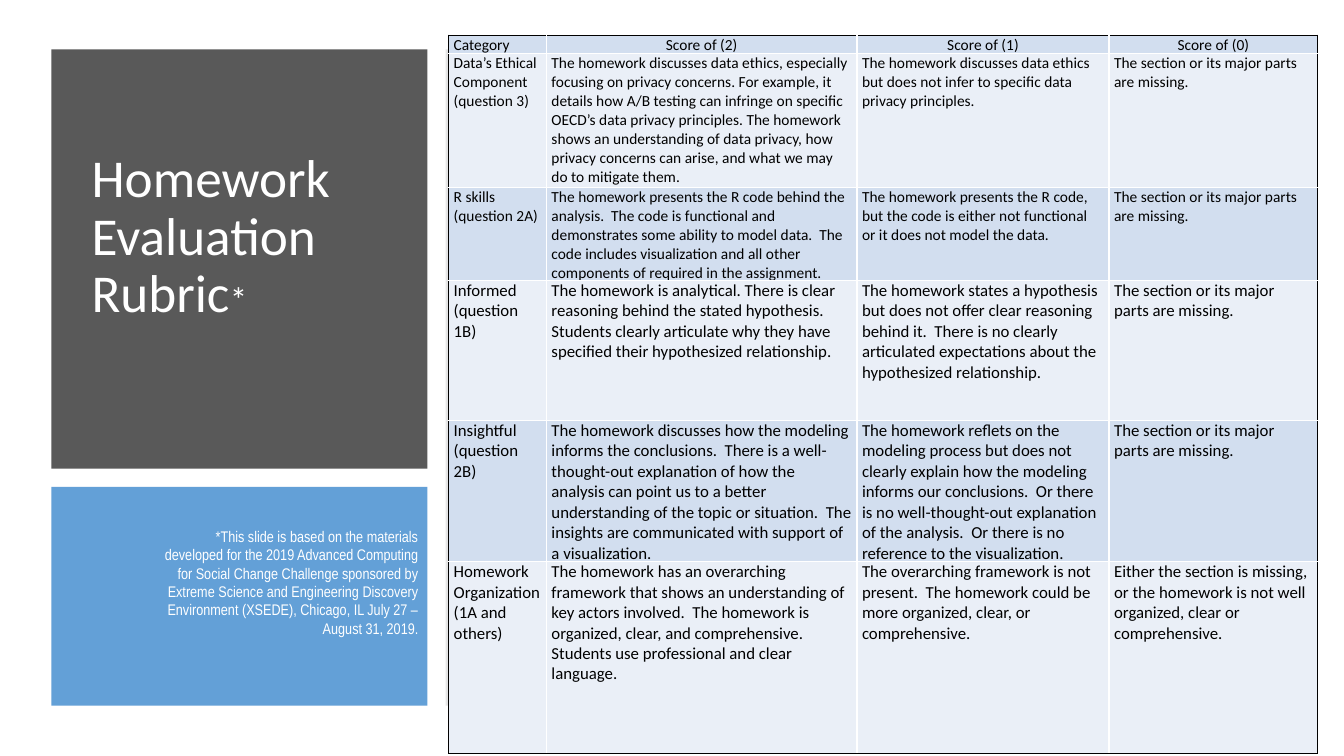
from pptx import Presentation
from pptx.dml.color import RGBColor
from pptx.enum.shapes import MSO_SHAPE as Shape
from pptx.enum.text import MSO_ANCHOR as Anchor, PP_ALIGN as Align
from pptx.oxml import parse_xml
from pptx.oxml.ns import nsdecls
from pptx.util import Inches, Pt


def paint(color_format, hex_color, opacity=100):
    color_format.rgb = RGBColor.from_string(hex_color)
    if opacity < 100:
        alpha = parse_xml(f'<a:alpha {nsdecls("a")} val="{opacity * 1000}"/>')
        color_format._xFill.find(".//{*}srgbClr").append(alpha)


def add_text(paragraph, text, size, font, color):
    run = paragraph.add_run()
    run.text = text
    run.font.size = Pt(size)
    run.font.name = font
    paint(run.font.color, color)


prs = Presentation()
prs.slide_width = Inches(13.33)
prs.slide_height = Inches(7.5)
slide = prs.slides.add_slide(prs.slide_layouts[6])

# Background panels: title, footnote, table
panels = [
    (0.51, 0.49, 3.73, 4.16, "595959", 100),
    (0.51, 4.83, 3.73, 2.17, "5B9BD5", 95),
    (4.42, 0.49, 8.41, 6.51, "808080", 20),
]
for left, top, width, height, color, opacity in panels:
    panel = slide.shapes.add_shape(
        Shape.RECTANGLE, Inches(left), Inches(top), Inches(width), Inches(height))
    panel.shadow.inherit = False
    panel.line.fill.background()
    panel.fill.solid()
    paint(panel.fill.fore_color, color, opacity)

# Title
title = slide.shapes.add_textbox(
    Inches(0.81), Inches(0.8), Inches(3.3), Inches(3.54)).text_frame
title.word_wrap = True
title.vertical_anchor = Anchor.MIDDLE
heading = title.paragraphs[0]
heading.line_spacing = 0.9
add_text(heading, "Homework Evaluation Rubric", 38, "Calibri", "FFFFFF")
add_text(heading, "*", 25, "Calibri", "FFFFFF")
heading.add_line_break()
heading.font.size = Pt(25)

# Footnote
footnote = slide.shapes.add_textbox(
    Inches(1.52), Inches(4.69), Inches(2.73), Inches(2.17)).text_frame
footnote.word_wrap = True
footnote.vertical_anchor = Anchor.MIDDLE
credit = footnote.paragraphs[0]
credit.alignment = Align.RIGHT
add_text(credit, "*This slide is based on the materials developed for the 2019 "
         "Advanced Computing for Social Change Challenge sponsored by Extreme "
         "Science and Engineering Discovery Environment (XSEDE), Chicago, IL "
         "July 27 – August 31, 2019.", 11, "Arial Narrow", "FFFFFF")

# Rubric content: a newline starts a new paragraph
missing = "The section or its major parts are missing."
rubric = [
    ["Category", "Score of (2)", "Score of (1)", "Score of (0)"],
    ["Data’s Ethical Component\n(question 3)",
     "The homework discusses data ethics, especially focusing on privacy concerns. "
     "For example, it details how A/B testing can infringe on specific OECD’s data "
     "privacy principles. The homework shows an understanding of data privacy, how "
     "privacy concerns can arise, and what we may do to mitigate them.",
     "The homework discusses data ethics but does not infer to specific data "
     "privacy principles.",
     missing],
    ["R skills (question 2A)",
     "The homework presents the R code behind the analysis.  The code is functional "
     "and demonstrates some ability to model data.  The code includes visualization "
     "and all other components of required in the assignment.",
     "The homework presents the R code, but the code is either not functional or it "
     "does not model the data.",
     missing],
    ["Informed (question 1B)",
     "The homework is analytical. There is clear reasoning behind the stated "
     "hypothesis.  Students clearly articulate why they have specified their "
     "hypothesized relationship.",
     "The homework states a hypothesis but does not offer clear reasoning behind "
     "it.  There is no clearly articulated expectations about the hypothesized "
     "relationship.",
     missing],
    ["Insightful\n(question 2B)",
     "The homework discusses how the modeling informs the conclusions.  There is a "
     "well-thought-out explanation of how the analysis can point us to a better "
     "understanding of the topic or situation.  The insights are communicated with "
     "support of a visualization.",
     "The homework reflets on the modeling process but does not clearly explain how "
     "the modeling informs our conclusions.  Or there is no well-thought-out "
     "explanation of the analysis.  Or there is no reference to the visualization.",
     missing],
    ["Homework Organization (1A and others)",
     "The homework has an overarching framework that shows an understanding of key "
     "actors involved.  The homework is organized, clear, and comprehensive. "
     "Students use professional and clear language.",
     "The overarching framework is not present.  The homework could be more "
     "organized, clear, or comprehensive.",
     "Either the section is missing, or the homework is not well organized, clear "
     "or comprehensive."],
]
column_widths = [0.97, 3.08, 2.5, 2.07]
row_heights = [0.18, 1.33, 0.63, 1.39, 1.07, 1.9]
last_row, last_column = len(row_heights) - 1, len(column_widths) - 1

# Rubric table
table = slide.shapes.add_table(
    len(row_heights), len(column_widths),
    Inches(4.45), Inches(0.35), Inches(8.61), Inches(7.13)).table
for column, width in zip(table.columns, column_widths):
    column.width = Inches(width)
for row, height in zip(table.rows, row_heights):
    row.height = Inches(height)

for r, scores in enumerate(rubric):
    for c, text in enumerate(scores):
        cell = table.cell(r, c)
        cell.margin_left = cell.margin_right = Inches(0.05)
        cell.margin_top = cell.margin_bottom = 0
        for i, line in enumerate(text.split("\n")):
            frame = cell.text_frame
            paragraph = frame.add_paragraph() if i else frame.paragraphs[0]
            if r == 0 and c > 0:
                paragraph.alignment = Align.CENTER
            add_text(paragraph, line, 11 if r < 3 else 12, "Calibri", "000000")
        cell.fill.solid()
        paint(cell.fill.fore_color, "EAEFF7" if r % 2 else "D2DEEF")

        # Black outer frame, white inner lines
        outer_edges = {"lnL": c == 0, "lnR": c == last_column,
                       "lnT": r == 0, "lnB": r == last_row}
        for position, (edge, is_outer) in enumerate(outer_edges.items()):
            border = parse_xml(
                f'<a:{edge} {nsdecls("a")} w="12700"><a:solidFill><a:srgbClr '
                f'val="{"000000" if is_outer else "FFFFFF"}"/></a:solidFill></a:{edge}>')
            cell._tc.get_or_add_tcPr().insert(position, border)

prs.save("out.pptx")
